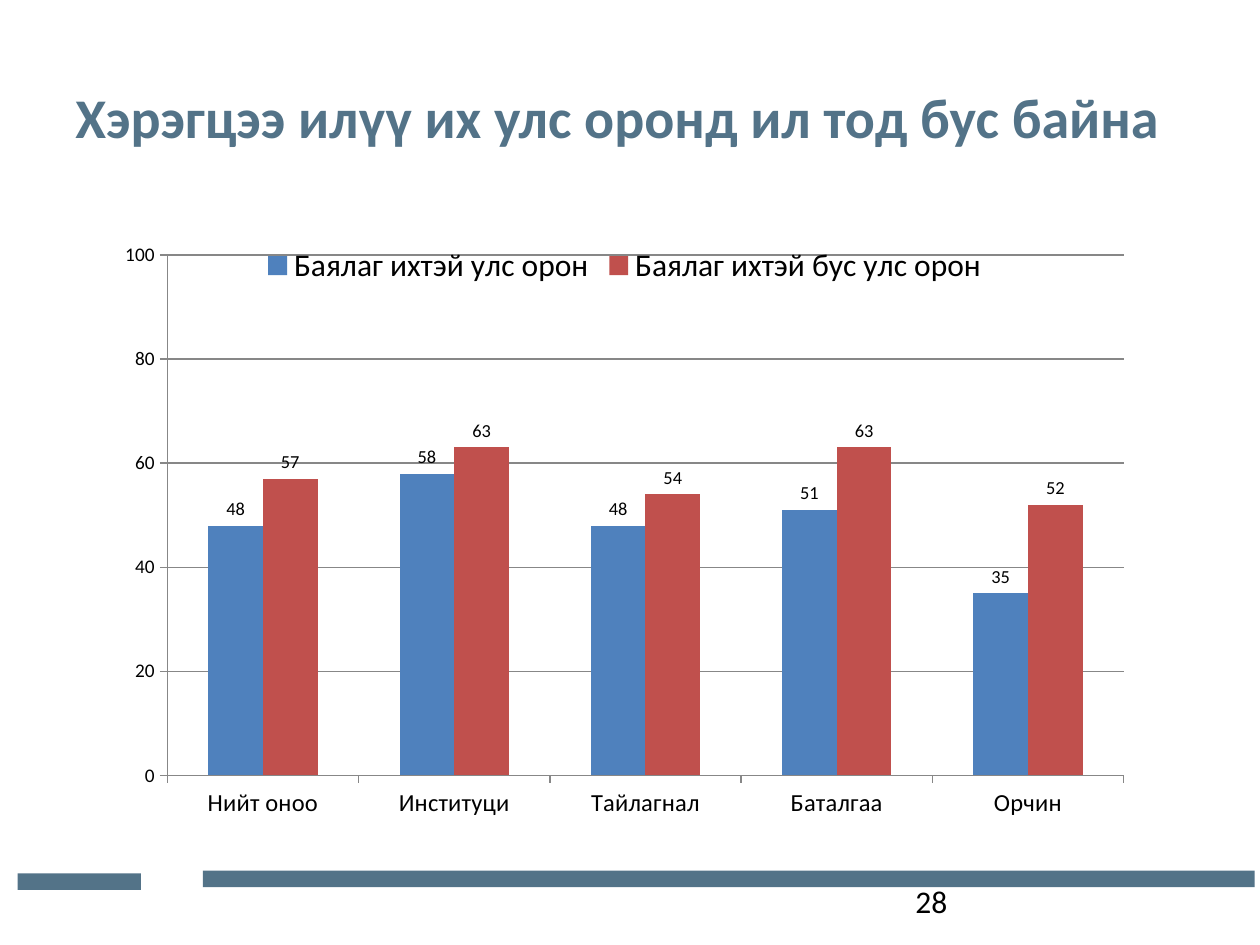
import dataclasses

import pptx
import pptx.chart.data
import pptx.dml.color
import pptx.enum.chart
import pptx.enum.shapes
import pptx.enum.text
import pptx.oxml
import pptx.oxml.ns
import pptx.util

Pt = pptx.util.Pt
RGBColor = pptx.dml.color.RGBColor

SLATE = RGBColor(0x53, 0x73, 0x88)
BLACK = RGBColor(0, 0, 0)
BLUE = RGBColor(0x4F, 0x81, 0xBD)
RED = RGBColor(0xC0, 0x50, 0x4D)
GRAY = RGBColor(0x87, 0x87, 0x87)
FONT = "Calibri"


@dataclasses.dataclass(frozen=True)
class Box:
    left: float
    top: float
    width: float
    height: float

    def lengths(self) -> tuple:
        return tuple(Pt(n) for n in (self.left, self.top, self.width, self.height))


@dataclasses.dataclass(frozen=True)
class Label:
    box: Box
    text: str
    size: float
    color: RGBColor
    bold: bool
    anchor: pptx.enum.text.MSO_ANCHOR


@dataclasses.dataclass(frozen=True)
class Group:
    name: str
    scores: tuple
    color: RGBColor


FOOTER_BARS = (Box(10, 499, 70.5, 9.5), Box(116, 497.5, 601, 9.5))
LABELS = (
    Label(Box(36, 21.6, 648, 90), "Хэрэгцээ илүү их улс оронд ил тод бус байна",
          32, SLATE, True, pptx.enum.text.MSO_ANCHOR.MIDDLE),
    Label(Box(516, 500.5, 168, 29), "28", 18, BLACK, False,
          pptx.enum.text.MSO_ANCHOR.TOP),
)
CHART_BOX = Box(60, 132, 594, 342)
PLOT_SHARE = {"x": 0.06, "y": 0.04, "w": 0.92, "h": 0.87}
CATEGORIES = ("Нийт оноо", "Институци", "Тайлагнал", "Баталгаа", "Орчин")
GROUPS = (
    Group("Баялаг ихтэй улс орон", (48, 58, 48, 51, 35), BLUE),
    Group("Баялаг ихтэй бус улс орон", (57, 63, 54, 63, 52), RED),
)


def set_font(font, size: float, color: RGBColor = BLACK, bold: bool = False) -> None:
    font.name = FONT
    font.size = Pt(size)
    font.bold = bold
    font.color.rgb = color


def draw_bar(slide, box: Box) -> None:
    bar = slide.shapes.add_shape(
        pptx.enum.shapes.MSO_SHAPE.RECTANGLE, *box.lengths())
    bar.shadow.inherit = False
    bar.fill.solid()
    bar.fill.fore_color.rgb = SLATE
    bar.line.fill.background()


def draw_label(slide, label: Label) -> None:
    frame = slide.shapes.add_textbox(*label.box.lengths()).text_frame
    frame.word_wrap = True
    frame.vertical_anchor = label.anchor
    frame.text = label.text
    set_font(frame.paragraphs[0].runs[0].font, label.size, label.color, label.bold)


def place_plot(chart) -> None:
    plot_area = chart.plots[0]._element.getparent()
    for old in plot_area.findall(pptx.oxml.ns.qn("c:layout")):
        plot_area.remove(old)
    modes = "".join(f'<c:{side}Mode val="edge"/>' for side in "xy")
    shares = "".join(f'<c:{k} val="{v}"/>' for k, v in PLOT_SHARE.items())
    plot_area.insert(0, pptx.oxml.parse_xml(
        f'<c:layout {pptx.oxml.ns.nsdecls("c")}><c:manualLayout>'
        f'<c:layoutTarget val="inner"/>{modes}{shares}'
        '</c:manualLayout></c:layout>'))


def style_axis(axis, size: float) -> None:
    axis.major_tick_mark = pptx.enum.chart.XL_TICK_MARK.OUTSIDE
    axis.minor_tick_mark = pptx.enum.chart.XL_TICK_MARK.NONE
    axis.format.line.color.rgb = GRAY
    axis.format.line.width = Pt(0.75)
    set_font(axis.tick_labels.font, size)


def style_group(series, group: Group) -> None:
    series.format.fill.solid()
    series.format.fill.fore_color.rgb = group.color
    series.invert_if_negative = False
    labels = series.data_labels
    labels.show_value = True
    labels.number_format = "#,##0"
    labels.number_format_is_linked = False
    labels.position = pptx.enum.chart.XL_LABEL_POSITION.OUTSIDE_END
    set_font(labels.font, 10.5)


def draw_chart(slide) -> None:
    scores = pptx.chart.data.CategoryChartData(number_format="0")
    scores.categories = CATEGORIES
    for group in GROUPS:
        scores.add_series(group.name, group.scores)
    chart = slide.shapes.add_chart(
        pptx.enum.chart.XL_CHART_TYPE.COLUMN_CLUSTERED,
        *CHART_BOX.lengths(), scores).chart
    chart.has_title = False
    set_font(chart.font, 10)
    place_plot(chart)

    columns = chart.plots[0]
    columns.gap_width = 150
    columns.overlap = 0
    columns.vary_by_categories = False
    for series, group in zip(columns.series, GROUPS):
        style_group(series, group)

    style_axis(chart.category_axis, 14)
    score_axis = chart.value_axis
    style_axis(score_axis, 11)
    score_axis.minimum_scale = 0
    score_axis.maximum_scale = 100
    score_axis.major_unit = 20
    score_axis.has_major_gridlines = True
    score_axis.major_gridlines.format.line.color.rgb = GRAY
    score_axis.major_gridlines.format.line.width = Pt(0.75)
    score_axis.tick_labels.number_format = "0"
    score_axis.tick_labels.number_format_is_linked = False

    chart.has_legend = True
    chart.legend.position = pptx.enum.chart.XL_LEGEND_POSITION.TOP
    chart.legend.include_in_layout = True
    set_font(chart.legend.font, 18)


def main() -> None:
    """Build the slide comparing openness scores of two country groups."""
    deck = pptx.Presentation()
    deck.slide_width = Pt(720)
    deck.slide_height = Pt(540)
    slide = deck.slides.add_slide(deck.slide_layouts[6])
    for box in FOOTER_BARS:
        draw_bar(slide, box)
    for label in LABELS:
        draw_label(slide, label)
    draw_chart(slide)
    deck.save("out.pptx")


if __name__ == "__main__":
    main()
